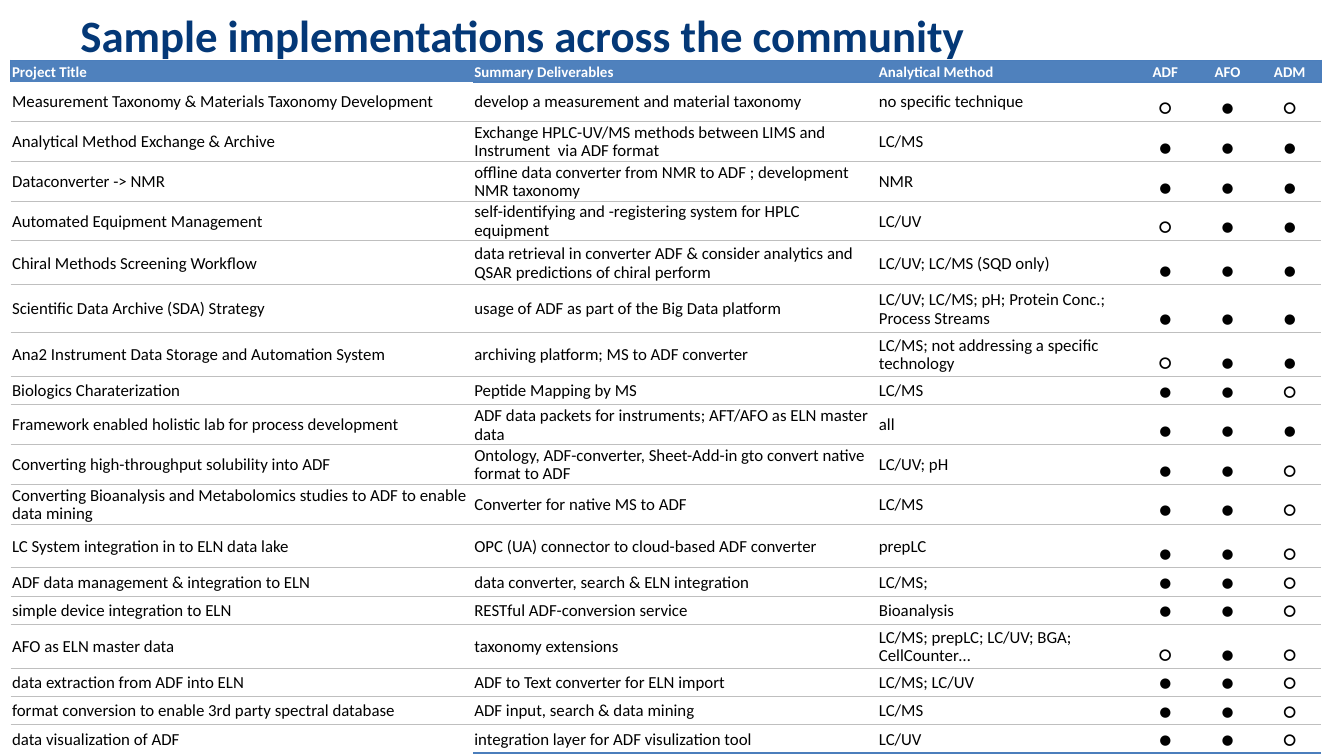
from dataclasses import dataclass

from lxml import etree
from pptx import Presentation
from pptx.dml.color import RGBColor
from pptx.enum.text import MSO_ANCHOR, PP_ALIGN
from pptx.oxml.ns import qn
from pptx.util import Inches, Pt

MIDDLE, BOTTOM = MSO_ANCHOR.MIDDLE, MSO_ANCHOR.BOTTOM
LEFT, CENTER = PP_ALIGN.LEFT, PP_ALIGN.CENTER


@dataclass(frozen=True)
class Theme:
    font: str = "Calibri"
    title: str = "043877"
    header: str = "4F81BD"
    frame: str = "4B7EBC"
    rule: str = "BFBFBF"
    white: str = "FFFFFF"
    black: str = "000000"
    title_size: float = 24
    header_size: float = 8
    body_size: float = 9
    mark_size: float = 12
    frame_width: float = 0.75
    rule_width: float = 0.5


THEME = Theme()
FRAME = (THEME.frame, THEME.frame_width)
RULE = (THEME.rule, THEME.rule_width)

SLIDE_WIDTH = 10
SLIDE_HEIGHT = SLIDE_WIDTH * 9 / 16
TEXT_WIDTHS = [3.44, 3.01, 1.91]
MARK_COLUMNS = 3
# Row heights in points
SINGLE, DOUBLE, TALL, TALLEST = 11.5, 21.3, 23.5, 25.7
HEADINGS = ["Project Title", "Summary Deliverables", "Analytical Method", "ADF", "AFO", "ADM"]
# Row height, project, deliverable, method, marks for ADF, AFO and ADM
PROJECTS = [
    (DOUBLE, "Measurement Taxonomy & Materials Taxonomy Development",
     "develop a measurement and material taxonomy", "no specific technique", "○●○"),
    (DOUBLE, "Analytical Method Exchange & Archive",
     "Exchange HPLC-UV/MS methods between LIMS and Instrument  via ADF format", "LC/MS", "●●●"),
    (DOUBLE, "Dataconverter -> NMR",
     "offline data converter from NMR to ADF ; development NMR taxonomy", "NMR", "●●●"),
    (DOUBLE, "Automated Equipment Management",
     "self-identifying and -registering system for HPLC equipment", "LC/UV", "○●●"),
    (TALL, "Chiral Methods Screening Workflow",
     "data retrieval in converter ADF & consider analytics and QSAR predictions of chiral perform",
     "LC/UV; LC/MS (SQD only)", "●●●"),
    (TALLEST, "Scientific Data Archive (SDA) Strategy",
     "usage of ADF as part of the Big Data platform",
     "LC/UV; LC/MS; pH; Protein Conc.; Process Streams", "●●●"),
    (TALL, "Ana2 Instrument Data Storage and Automation System",
     "archiving platform; MS to ADF converter",
     "LC/MS; not addressing a specific technology", "○●●"),
    (SINGLE, "Biologics Charaterization", "Peptide Mapping by MS", "LC/MS", "●●○"),
    (DOUBLE, "Framework enabled holistic lab for process development",
     "ADF data packets for instruments; AFT/AFO as ELN master data", "all", "●●●"),
    (DOUBLE, "Converting high-throughput solubility into ADF",
     "Ontology, ADF-converter, Sheet-Add-in gto convert native format to ADF",
     "LC/UV; pH", "●●○"),
    (DOUBLE, "Converting Bioanalysis and Metabolomics studies to ADF to enable data mining",
     "Converter for native MS to ADF", "LC/MS", "●●○"),
    (TALL, "LC System integration in to ELN data lake",
     "OPC (UA) connector to cloud-based ADF converter", "prepLC", "●●○"),
    (SINGLE, "ADF data management & integration to ELN",
     "data converter, search & ELN integration", "LC/MS;", "●●○"),
    (SINGLE, "simple device integration to ELN",
     "RESTful ADF-conversion service", "Bioanalysis", "●●○"),
    (TALL, "AFO as ELN master data", "taxonomy extensions",
     "LC/MS; prepLC; LC/UV; BGA; CellCounter…", "○●○"),
    (SINGLE, "data extraction from ADF into ELN",
     "ADF to Text converter for ELN import", "LC/MS; LC/UV", "●●○"),
    (SINGLE, "format conversion to enable 3rd party spectral database",
     "ADF input, search & data mining", "LC/MS", "●●○"),
    (SINGLE, "data visualization of ADF",
     "integration layer for ADF visulization tool", "LC/UV", "●●○"),
]


def write(frame, text, size, color, bold=False, align=LEFT, spacing=None):
    para = frame.paragraphs[0]
    para.alignment = align
    if spacing:
        para.line_spacing = spacing
    span = para.add_run()
    span.text = text
    for name, value in {"name": THEME.font, "size": Pt(size), "bold": bold}.items():
        setattr(span.font, name, value)
    span.font.color.rgb = RGBColor.from_string(color)


def set_borders(cell, **edges):
    """Draw the given edges (L, R, T, B) and clear the others."""
    properties = cell._tc.get_or_add_tcPr()
    for side in "LRTB":
        line = etree.SubElement(properties, qn(f"a:ln{side}"))
        if edges.get(side):
            color, width = edges[side]
            line.set("w", str(Pt(width)))
            fill = etree.SubElement(line, qn("a:solidFill"))
            etree.SubElement(fill, qn("a:srgbClr"), val=color)
        else:
            etree.SubElement(line, qn("a:noFill"))


def style_cell(cell, anchor):
    margin = Inches(0.01)
    settings = {"margin_left": margin, "margin_right": margin, "margin_top": margin,
                "margin_bottom": 0, "vertical_anchor": anchor}
    for name, value in settings.items():
        setattr(cell, name, value)


def add_title(page, left, top, width, height):
    box = page.shapes.add_textbox(Inches(left), Inches(top), Inches(width), Inches(height))
    frame = box.text_frame
    frame.word_wrap = True
    frame.vertical_anchor = MIDDLE
    write(frame, "Sample implementations across the community",
          THEME.title_size, THEME.title, bold=True)


def fill_header(table):
    last = len(HEADINGS) - 1
    for col, heading in enumerate(HEADINGS):
        cell = table.cell(0, col)
        style_cell(cell, BOTTOM)
        set_borders(cell, T=FRAME, L=FRAME if col == 0 else None,
                    R=FRAME if col == last else None, B=FRAME if col else None)
        cell.fill.solid()
        cell.fill.fore_color.rgb = RGBColor.from_string(THEME.header)
        write(cell.text_frame, heading, THEME.header_size, THEME.white, bold=True,
              align=CENTER if col >= len(TEXT_WIDTHS) else LEFT)


def fill_project(table, row, texts, marks):
    last = row == len(PROJECTS)
    for col, text in enumerate([*texts, *marks]):
        cell = table.cell(row, col)
        is_mark = col >= len(texts)
        style_cell(cell, BOTTOM if is_mark else MIDDLE)
        top, bottom = RULE, RULE
        if row == 1:
            top = FRAME if col else None
        if last:
            bottom = FRAME if col else None
        set_borders(cell, T=top, B=bottom)
        cell.fill.background()
        if is_mark:
            write(cell.text_frame, text, THEME.mark_size, THEME.black, align=CENTER)
        else:
            write(cell.text_frame, text, THEME.body_size, THEME.black, spacing=0.9)


def add_project_table(page, left, top, width, height):
    heights = [SINGLE] + [project[0] for project in PROJECTS]
    mark_width = (width - sum(TEXT_WIDTHS)) / MARK_COLUMNS
    widths = TEXT_WIDTHS + [mark_width] * MARK_COLUMNS
    table = page.shapes.add_table(len(heights), len(widths), Inches(left), Inches(top),
                                  Inches(width), Inches(height)).table
    table.horz_banding = False
    for column, size in zip(table.columns, widths):
        column.width = Inches(size)
    for line, size in zip(table.rows, heights):
        line.height = Pt(size)
    fill_header(table)
    for row, (_, *texts, marks) in enumerate(PROJECTS, start=1):
        fill_project(table, row, texts, marks)


def main():
    deck = Presentation()
    deck.slide_width, deck.slide_height = Inches(SLIDE_WIDTH), Inches(SLIDE_HEIGHT)
    page = deck.slides.add_slide(deck.slide_layouts[6])
    add_title(page, 0.5, 0, 9, 0.51)
    add_project_table(page, 0.08, 0.45, 9.75, 5.14)
    deck.save("out.pptx")


if __name__ == "__main__":
    main()
